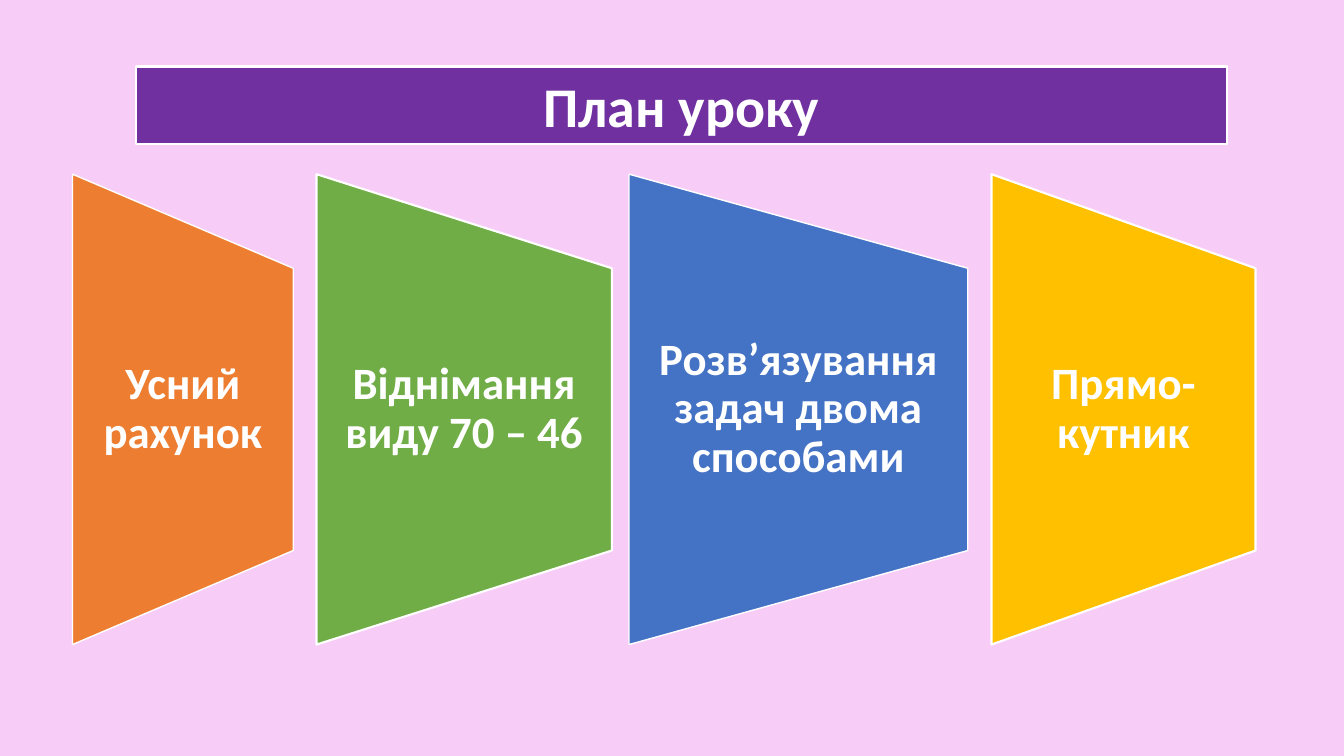
from pptx import Presentation
from pptx.dml.color import RGBColor
from pptx.enum.shapes import MSO_SHAPE
from pptx.enum.text import MSO_ANCHOR, PP_ALIGN
from pptx.util import Pt

RECTANGLE = MSO_SHAPE.RECTANGLE
TRAPEZOID = MSO_SHAPE.FLOWCHART_MANUAL_OPERATION
MIDDLE = MSO_ANCHOR.MIDDLE
CENTER = PP_ALIGN.CENTER


def paint(color_format, color):
    color_format.rgb = RGBColor.from_string(color)


def add_block(kind, left, top, width, height, color, line_width):
    block = page.shapes.add_shape(kind, Pt(left), Pt(top), Pt(width), Pt(height))
    block.shadow.inherit = False
    block.fill.solid()
    paint(block.fill.fore_color, color)
    paint(block.line.color, "FFFFFF")
    block.line.width = Pt(line_width)
    return block


deck = Presentation()
deck.slide_width = Pt(960)
deck.slide_height = Pt(540)
page = deck.slides.add_slide(deck.slide_layouts[6])
page.background.fill.solid()
paint(page.background.fill.fore_color, "F7CDF7")

title = add_block(RECTANGLE, 97.2, 47.5, 779, 55.5, "7030A0", 1.5)
labels = [(title, "План уроку", 40, 1.0)]

stage_height = 336
label_height = 201.6
middle = 292.4
stages = [
    ("Усний рахунок", 51.8, 157.7, "ED7D31", 1),
    ("Віднімання виду 70 – 46", 226.1, 211, "70AD47", 1.5),
    ("Розв’язування задач двома способами", 449.3, 242, "4472C4", 1),
    ("Прямо-кутник", 708.2, 188.6, "FFC000", 1.5),
]
for text, left, width, color, line_width in stages:
    stage = add_block(TRAPEZOID, left + (width - stage_height) / 2, middle - width / 2,
                      stage_height, width, color, line_width)
    stage.rotation = 270
    box = page.shapes.add_textbox(Pt(left), Pt(middle - label_height / 2),
                                  Pt(width), Pt(label_height))
    frame = box.text_frame
    frame.margin_left = frame.margin_right = Pt(16)
    frame.margin_top = frame.margin_bottom = Pt(0)
    labels.append((box, text, 32, 0.9))

for box, text, size, spacing in labels:
    box.text_frame.word_wrap = True
    box.text_frame.vertical_anchor = MIDDLE
    para = box.text_frame.paragraphs[0]
    para.alignment = CENTER
    para.line_spacing = spacing
    span = para.add_run()
    span.text = text
    span.font.name = "Calibri"
    span.font.size = Pt(size)
    span.font.bold = True
    paint(span.font.color, "FFFFFF")

deck.save("out.pptx")
